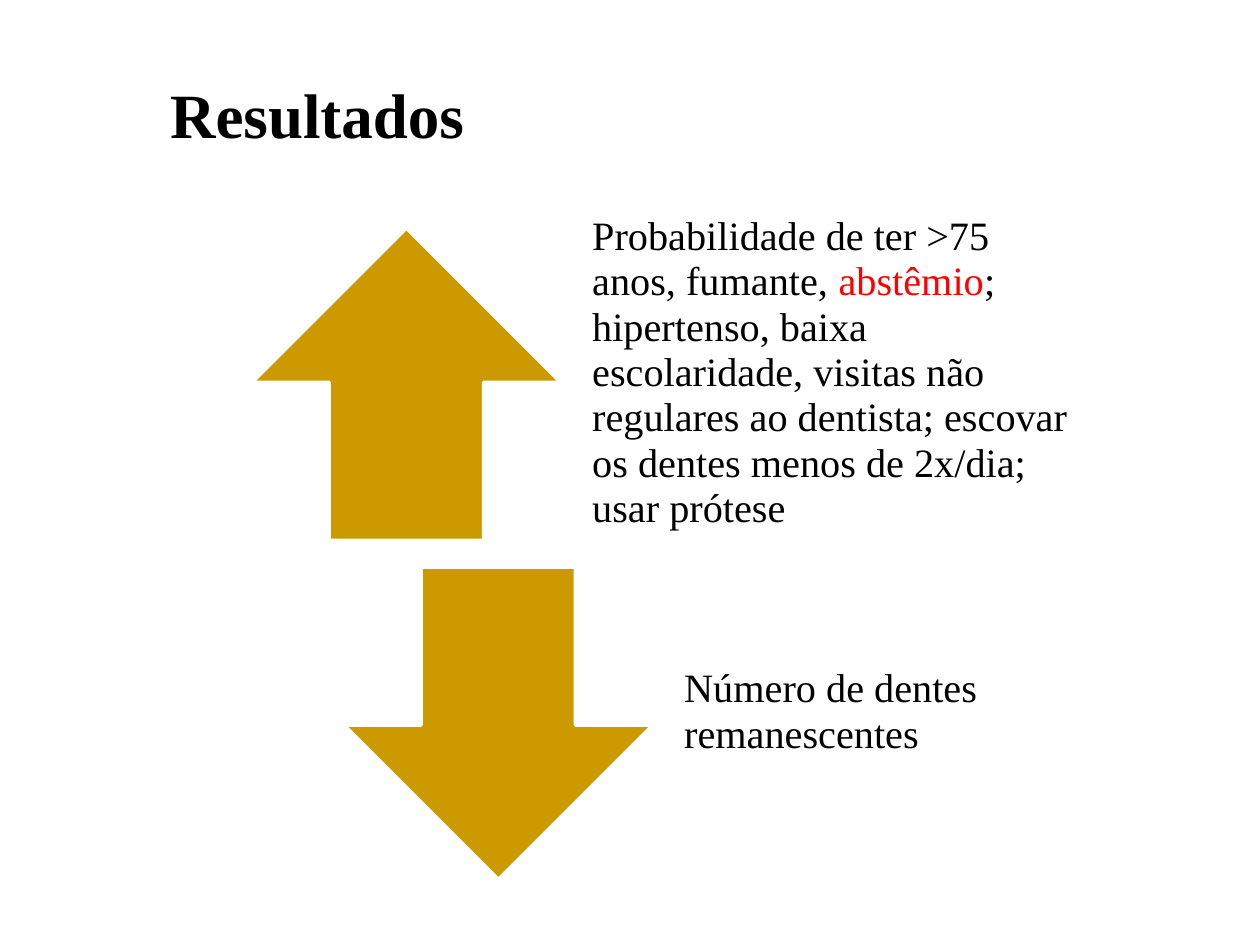
from pptx import Presentation
from pptx.dml.color import RGBColor
from pptx.enum.shapes import MSO_SHAPE
from pptx.enum.text import MSO_ANCHOR, PP_ALIGN
from pptx.util import Inches, Pt

UP, DOWN = MSO_SHAPE.UP_ARROW, MSO_SHAPE.DOWN_ARROW
MIDDLE, BOTTOM = MSO_ANCHOR.MIDDLE, MSO_ANCHOR.BOTTOM
LEFT = PP_ALIGN.LEFT

FONT = "Times New Roman"
BLACK, RED, GOLD, WHITE = "000000", "FF0000", "CC9900", "FFFFFF"

TITLE = "Resultados"
# arrow, left, top, text runs with their colours
ROWS = [
    (UP, 2, 1.81, [
        ("Probabilidade de ter >75 anos, fumante, ", BLACK),
        ("abstêmio", RED),
        ("; hipertenso, baixa escolaridade, visitas não regulares ao dentista; "
         "escovar os dentes menos de 2x/dia; usar prótese", BLACK),
    ]),
    (DOWN, 2.73, 4.5, [("Número de dentes remanescentes", BLACK)]),
]
ARROW_W, TEXT_W, ROW_H = 2.45, 4.15, 2.48
TEXT_DX = 2.52
INSET = 0.18


def color(code):
    return RGBColor.from_string(code)


def add_title(slide):
    title = slide.shapes.title
    title.left, title.top = Inches(1.25), Inches(0.08)
    title.width, title.height = Inches(7.42), Inches(1.17)
    frame = title.text_frame
    frame.text = TITLE
    frame.vertical_anchor = BOTTOM
    para = frame.paragraphs[0]
    para.alignment = LEFT
    font = para.font
    font.name, font.size, font.bold = FONT, Pt(36), True
    font.color.rgb = color(BLACK)


def add_arrow(slide, kind, left, top):
    arrow = slide.shapes.add_shape(
        kind, Inches(left), Inches(top), Inches(ARROW_W), Inches(ROW_H))
    arrow.shadow.inherit = False
    arrow.fill.solid()
    arrow.fill.fore_color.rgb = color(GOLD)
    arrow.line.color.rgb = color(WHITE)
    arrow.line.width = Pt(2)


def add_text(slide, left, top, runs):
    box = slide.shapes.add_textbox(
        Inches(left), Inches(top), Inches(TEXT_W), Inches(ROW_H))
    frame = box.text_frame
    frame.word_wrap = True
    frame.vertical_anchor = MIDDLE
    frame.margin_left = frame.margin_right = frame.margin_bottom = Inches(INSET)
    frame.margin_top = 0
    para = frame.paragraphs[0]
    para.alignment = LEFT
    para.line_spacing = 0.94
    para.font.name, para.font.size = FONT, Pt(23)
    for text, code in runs:
        run = para.add_run()
        run.text = text
        run.font.color.rgb = color(code)


def main():
    deck = Presentation()
    deck.slide_width, deck.slide_height = Inches(10), Inches(7.5)
    slide = deck.slides.add_slide(deck.slide_layouts[5])
    add_title(slide)
    for kind, left, top, runs in ROWS:
        add_arrow(slide, kind, left, top)
        add_text(slide, left + TEXT_DX, top, runs)
    deck.save("out.pptx")


if __name__ == "__main__":
    main()
